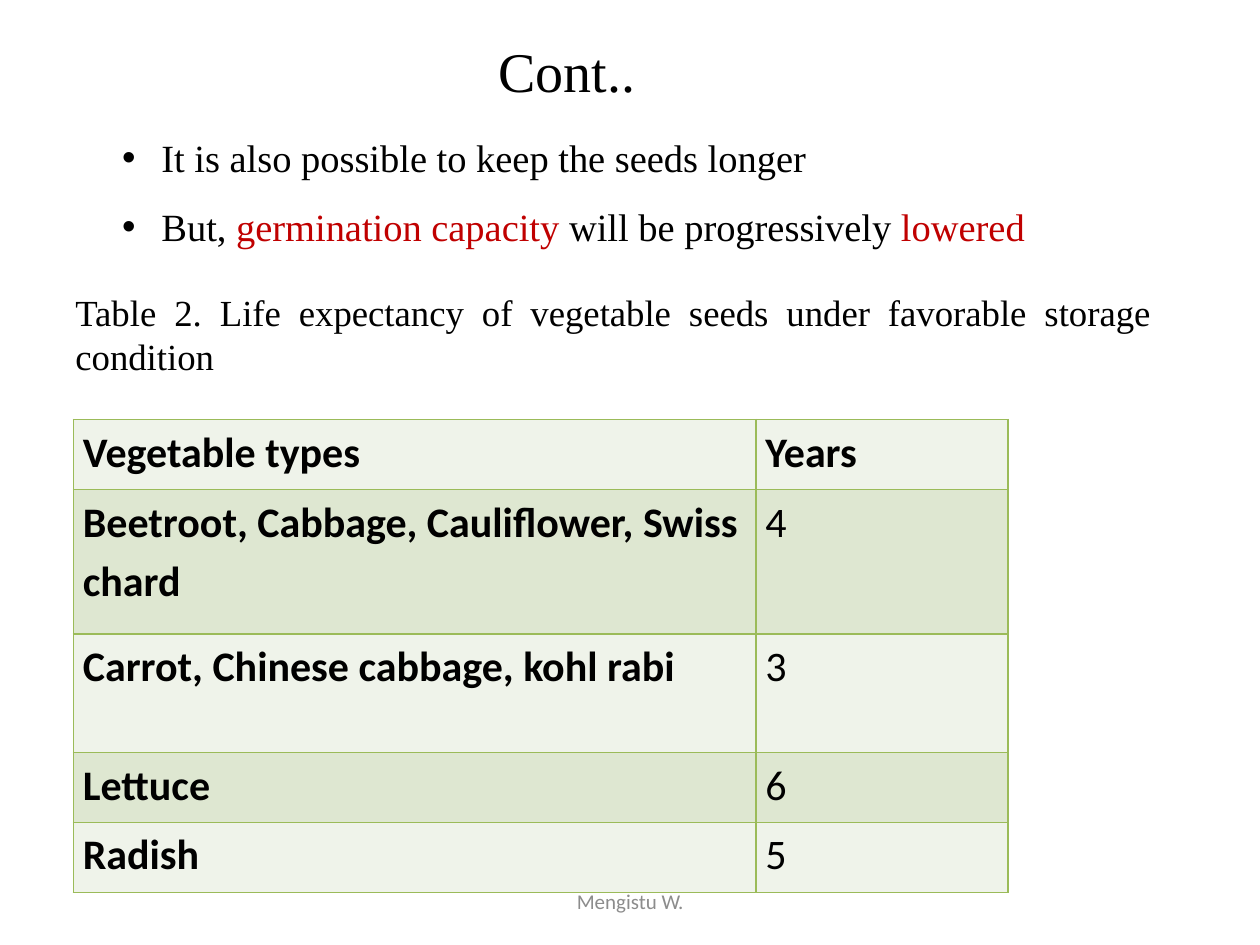
from lxml.etree import SubElement
from pptx import Presentation
from pptx.dml.color import RGBColor
from pptx.enum.text import MSO_ANCHOR as Anchor, MSO_AUTO_SIZE as AutoSize, PP_ALIGN as Align
from pptx.oxml.ns import qn
from pptx.util import Cm, Pt

# Content
TITLE = "Cont.."
BULLETS = [
    [("It is also possible to keep the seeds longer", "text")],
    [("But, ", "text"), ("germination capacity ", "accent"),
     ("will be progressively ", "text"), ("lowered", "accent")],
]
CAPTION = "Table 2. Life expectancy of vegetable seeds under favorable storage condition"
ROWS = [
    ("Vegetable types", "Years"),
    ("Beetroot, Cabbage, Cauliflower, Swiss chard", "4"),
    ("Carrot, Chinese cabbage, kohl rabi", "3"),
    ("Lettuce", "6"),
    ("Radish", "5"),
]
FOOTER = "Mengistu W."

# Style
COLORS = {"text": "000000", "accent": "C00000", "muted": "8C8C8C",
          "border": "9BBB59", "light": "EFF3EA", "band": "DEE7D1"}
SERIF, SANS = "Times New Roman", "Calibri"
COLUMN_WIDTHS = [13.76, 5.08]
ROW_HEIGHTS = [1.41, 2.91, 2.39, 1.41, 1.41]


def color(name):
    return RGBColor.from_string(COLORS[name])


def style(span, font, size, color_name="text", bold=False):
    span.font.name = font
    span.font.size = Pt(size)
    span.font.bold = bold
    span.font.color.rgb = color(color_name)


def place(shape, left, top, width, height):
    shape.left, shape.top = Cm(left), Cm(top)
    shape.width, shape.height = Cm(width), Cm(height)


def write(shape, text, align, anchor, *look):
    frame = shape.text_frame
    frame.word_wrap = True
    frame.auto_size = AutoSize.NONE
    frame.vertical_anchor = anchor
    frame.text = text
    para = frame.paragraphs[0]
    para.alignment = align
    style(para.runs[0], *look)


def add_borders(cell):
    properties = cell._tc.get_or_add_tcPr()
    for position, side in enumerate(("a:lnL", "a:lnR", "a:lnT", "a:lnB")):
        line = properties.makeelement(qn(side), {"w": str(Pt(1))})
        fill = SubElement(line, qn("a:solidFill"))
        SubElement(fill, qn("a:srgbClr"), val=COLORS["border"])
        properties.insert(position, line)


deck = Presentation()
deck.slide_width, deck.slide_height = Cm(25.4), Cm(19.05)
page = deck.slides.add_slide(deck.slide_layouts[1])

# Title
title = page.shapes.title
place(title, 0, 0.2, 22.86, 2.41)
write(title, TITLE, Align.CENTER, Anchor.MIDDLE, SERIF, 32)

# Bullets
body = page.placeholders[1]
place(body, 2.21, 2.11, 21.89, 2.92)
frame = body.text_frame
frame.auto_size = AutoSize.NONE
for index, parts in enumerate(BULLETS):
    para = frame.add_paragraph() if index else frame.paragraphs[0]
    para.alignment = Align.JUSTIFY
    para.line_spacing = 1.5
    para.space_before = Pt(0)
    properties = para._p.get_or_add_pPr()
    properties.set("marL", str(Cm(0.79)))
    properties.set("indent", str(Cm(-0.79)))
    for text, color_name in parts:
        span = para.add_run()
        span.text = text
        style(span, SERIF, 22, color_name)

# Table
table = page.shapes.add_table(
    len(ROWS), len(COLUMN_WIDTHS), Cm(1.48), Cm(8.46),
    Cm(sum(COLUMN_WIDTHS)), Cm(sum(ROW_HEIGHTS))).table
for column, width in zip(table.columns, COLUMN_WIDTHS):
    column.width = Cm(width)
for row_index, (row, height) in enumerate(zip(ROWS, ROW_HEIGHTS)):
    table.rows[row_index].height = Cm(height)
    for column_index, text in enumerate(row):
        cell = table.cell(row_index, column_index)
        cell.margin_left = cell.margin_right = Cm(0.19)
        cell.margin_top = cell.margin_bottom = 0
        cell.fill.solid()
        cell.fill.fore_color.rgb = color("band" if row_index % 2 else "light")
        add_borders(cell)
        cell.text = text
        para = cell.text_frame.paragraphs[0]
        para.line_spacing = 1.15
        style(para.runs[0], SANS, 24, bold=row_index == 0 or column_index == 0)

# Caption and footer
caption = page.shapes.add_textbox(Cm(1.27), Cm(5.72), Cm(22.2), Cm(2.06))
write(caption, CAPTION, Align.JUSTIFY, Anchor.TOP, SERIF, 21)
footer = page.shapes.add_textbox(Cm(8.68), Cm(17.65), Cm(8.05), Cm(1.02))
write(footer, FOOTER, Align.CENTER, Anchor.MIDDLE, SANS, 12, "muted")

deck.save("out.pptx")
